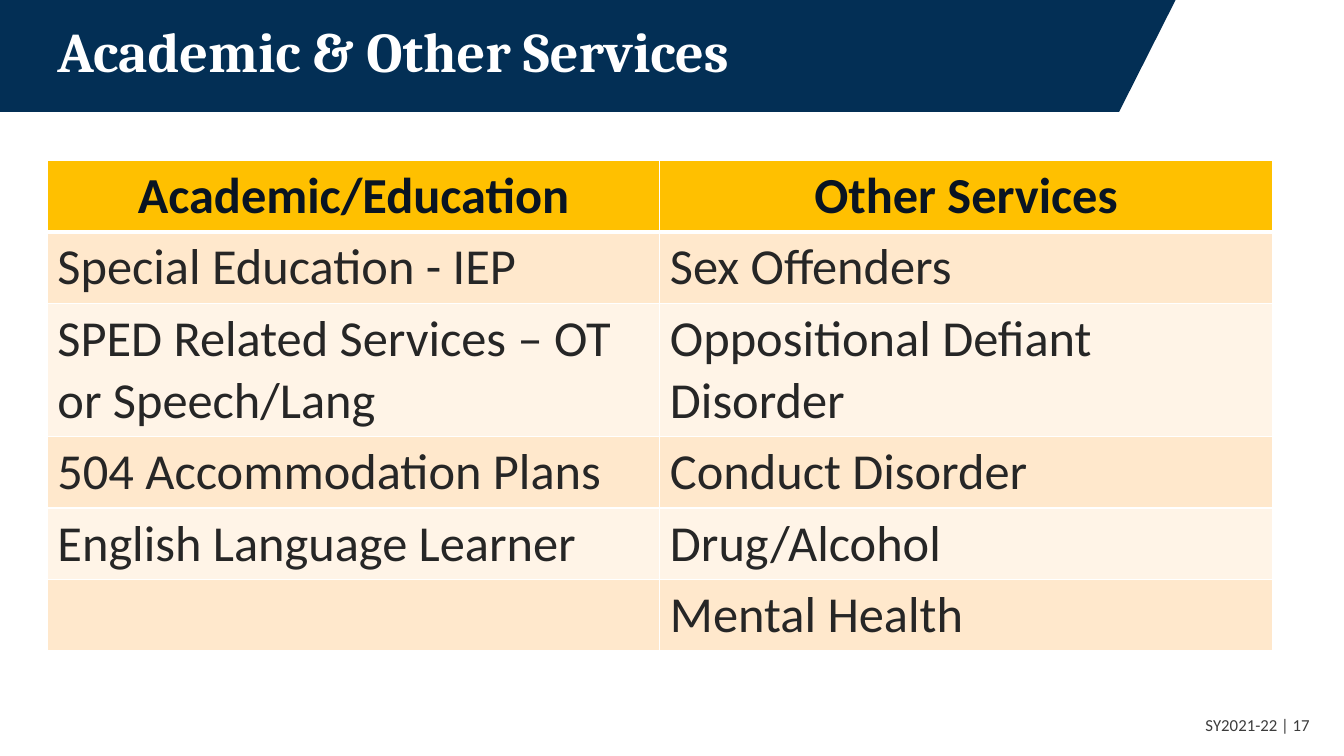
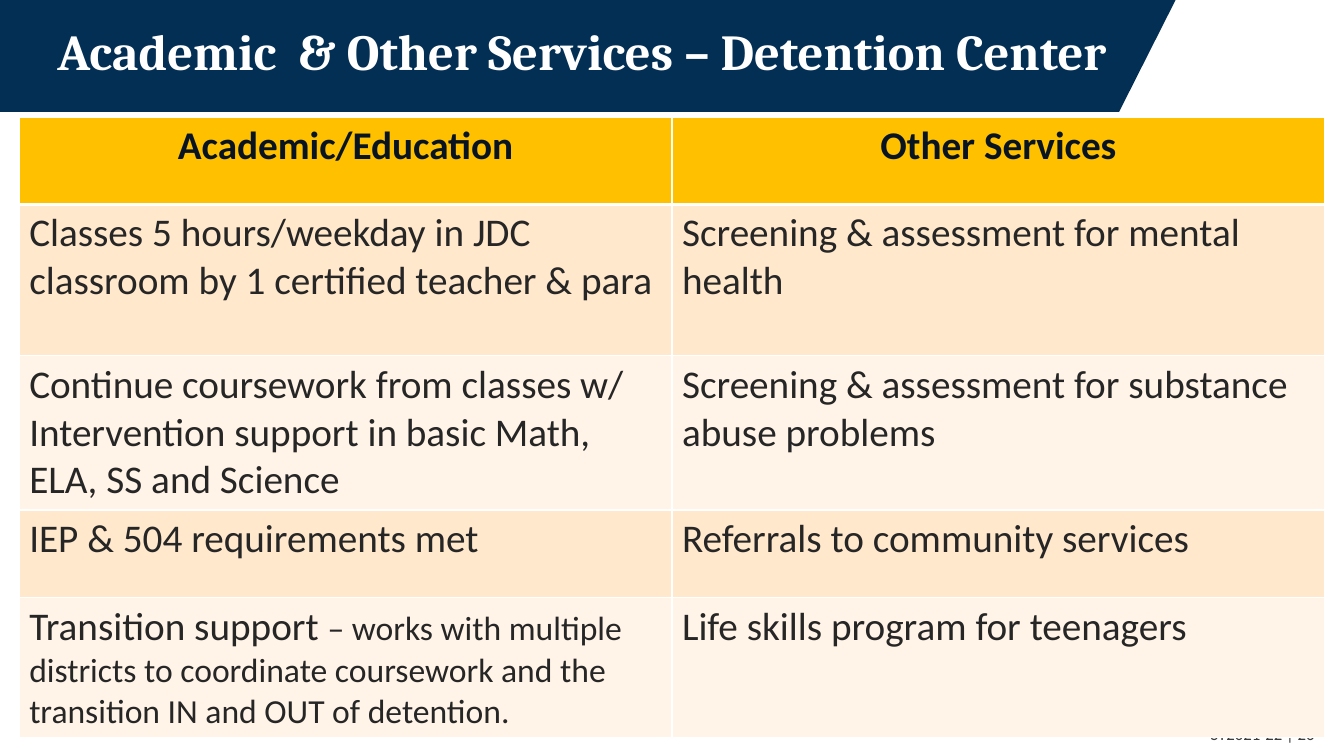
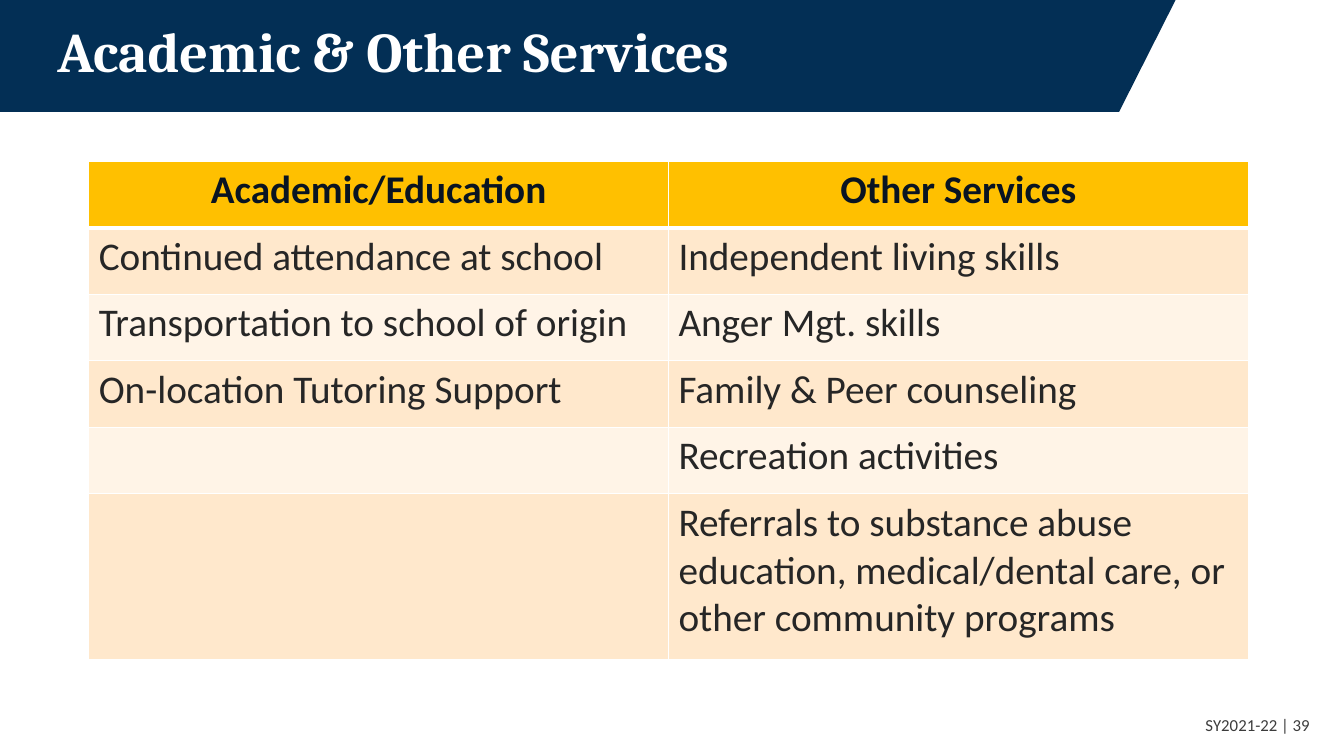
from lxml import etree
from pptx import Presentation
from pptx.dml.color import RGBColor
from pptx.enum.text import MSO_ANCHOR, PP_ALIGN
from pptx.oxml.ns import qn
from pptx.util import Inches, Pt

LEFT, CENTER, RIGHT = PP_ALIGN.LEFT, PP_ALIGN.CENTER, PP_ALIGN.RIGHT
MIDDLE = MSO_ANCHOR.MIDDLE

NAVY = RGBColor(0x03, 0x2F, 0x55)
WHITE = RGBColor(0xFF, 0xFF, 0xFF)
GOLD = RGBColor(0xFF, 0xC0, 0x00)
PEACH = RGBColor(0xFF, 0xE8, 0xCC)
CREAM = RGBColor(0xFF, 0xF4, 0xE7)
HEADER_INK = RGBColor(0x09, 0x14, 0x22)
BODY_INK = RGBColor(0x26, 0x26, 0x26)
FOOTER_INK = RGBColor(0x3C, 0x3C, 0x3C)

# Shared geometry and text formats
BAND_OUTLINE = [(0, 0), (11.66, 0), (11.1, 1.11), (0, 1.11)]
TITLE_BOX = (0.47, 0, 11.5, 1.08)
FOOTER_SIZE = (3, 0.4)
TITLE_FORMAT = {"name": "Cambria", "bold": True}
FOOTER_FORMAT = {"name": "Calibri", "size": Pt(12)}
HEADER_FORMAT = {"name": "Calibri", "bold": True}
BODY_FORMAT = {"name": "Calibri", "bold": False}

# Content: a cell is a string, or a list of (text, size) runs
HEADERS = ("Academic/Education", "Other Services")
SLIDES = [
    {
        "title": "Academic & Other Services", "title_size": 40,
        "page": 17, "footer_at": (10.09, 6.99),
        "table_at": (0.47, 1.59), "width": 12.15, "text_size": 36,
        "heights": [0.71, 0.71, 1.32, 0.71, 0.71, 0.71],
        "rows": [
            ("Special Education - IEP", "Sex Offenders"),
            ("SPED Related Services – OT or Speech/Lang",
             "Oppositional Defiant Disorder"),
            ("504 Accommodation Plans", "Conduct Disorder"),
            ("English Language Learner", "Drug/Alcohol"),
            ("", "Mental Health"),
        ],
    },
    {
        "title": "Academic  & Other Services – Detention Center",
        "title_size": 36,
        "page": 26, "footer_at": (10.14, 7.08),
        "table_at": (0.19, 1.16), "width": 12.95, "text_size": 28,
        "heights": [0.87, 1.5, 1.53, 0.87, 1.39],
        "rows": [
            ("Classes 5 hours/weekday in JDC classroom by 1 certified "
             "teacher & para",
             "Screening & assessment for mental health"),
            ("Continue coursework from classes w/ Intervention support in "
             "basic Math, ELA, SS and Science",
             "Screening & assessment for substance abuse problems"),
            ("IEP & 504 requirements met", "Referrals to community services"),
            ([("Transition support ", 28),
              ("– works with multiple districts to coordinate coursework "
               "and the transition IN and OUT of detention.", 24)],
             "Life skills program for teenagers"),
        ],
    },
    {
        "title": "Academic & Other Services", "title_size": 40,
        "page": 39, "footer_at": (10.09, 6.99),
        "table_at": (0.88, 1.6), "width": 11.5, "text_size": 28,
        "heights": [0.66, 0.66, 0.66, 0.66, 0.66, 1.64],
        "rows": [
            ("Continued attendance at school", "Independent living skills"),
            ("Transportation to school of origin", "Anger Mgt. skills"),
            ("On-location Tutoring Support", "Family & Peer counseling"),
            ("", "Recreation activities"),
            ("", "Referrals to substance abuse education, medical/dental "
                 "care, or other community programs"),
        ],
    },
]


def set_font(font, color, **values):
    for attribute, value in values.items():
        setattr(font, attribute, value)
    font.color.rgb = color


def add_line(slide, box, text, align, color, **values):
    """Place one vertically centred line of text."""
    frame = slide.shapes.add_textbox(*map(Inches, box)).text_frame
    frame.word_wrap = True
    frame.vertical_anchor = MIDDLE
    line = frame.paragraphs[0]
    line.alignment = align
    run = line.add_run()
    run.text = text
    set_font(run.font, color, **values)
    return line


def add_band(slide):
    points = [(Inches(x), Inches(y)) for x, y in BAND_OUTLINE]
    builder = slide.shapes.build_freeform(*points[0])
    builder.add_line_segments(points[1:], close=True)
    band = builder.convert_to_shape()
    band.shadow.inherit = False
    band.fill.solid()
    band.fill.fore_color.rgb = NAVY
    band.line.fill.background()


def set_borders(cell, top, bottom):
    properties = cell._tc.get_or_add_tcPr()
    for side, points in (("L", 1), ("R", 1), ("T", top), ("B", bottom)):
        border = etree.SubElement(properties, qn(f"a:ln{side}"),
                                  w=str(Pt(points)))
        fill = etree.SubElement(border, qn("a:solidFill"))
        etree.SubElement(fill, qn("a:srgbClr"), val=str(WHITE))


def fill_cell(cell, content, row, size):
    is_header = row == 0
    # A thick rule separates the header from the first body row
    set_borders(cell, top=3 if row == 1 else 1, bottom=3 if is_header else 1)
    cell.fill.solid()
    cell.fill.fore_color.rgb = GOLD if is_header else (CREAM, PEACH)[row % 2]
    paragraph = cell.text_frame.paragraphs[0]
    paragraph.alignment = CENTER if is_header else LEFT
    paragraph.font.size = Pt(size)
    runs = [(content, size)] if isinstance(content, str) else content
    for text, run_size in runs:
        if text:
            run = paragraph.add_run()
            run.text = text
            set_font(run.font, HEADER_INK if is_header else BODY_INK,
                     size=Pt(run_size),
                     **(HEADER_FORMAT if is_header else BODY_FORMAT))


def add_services(slide, content):
    rows = [HEADERS] + content["rows"]
    box = (*content["table_at"], content["width"], sum(content["heights"]))
    services = slide.shapes.add_table(len(rows), len(HEADERS),
                                      *map(Inches, box)).table
    services.first_row = services.horz_banding = False
    for column in services.columns:
        column.width = Inches(content["width"] / len(HEADERS))
    for r, (row, height) in enumerate(zip(rows, content["heights"])):
        services.rows[r].height = Inches(height)
        for c, cell_content in enumerate(row):
            fill_cell(services.cell(r, c), cell_content, r,
                      content["text_size"])


def main():
    deck = Presentation()
    deck.slide_width, deck.slide_height = Inches(13.33), Inches(7.5)
    blank = deck.slide_layouts[6]
    for content in SLIDES:
        slide = deck.slides.add_slide(blank)
        add_band(slide)
        # The footer lies behind the table
        add_line(slide, content["footer_at"] + FOOTER_SIZE,
                 f" SY2021-22 | {content['page']}", RIGHT, FOOTER_INK,
                 **FOOTER_FORMAT)
        add_services(slide, content)
        title = add_line(slide, TITLE_BOX, content["title"], LEFT, WHITE,
                         size=Pt(content["title_size"]), **TITLE_FORMAT)
        title.line_spacing = 0.9
    deck.save("out.pptx")


if __name__ == "__main__":
    main()
